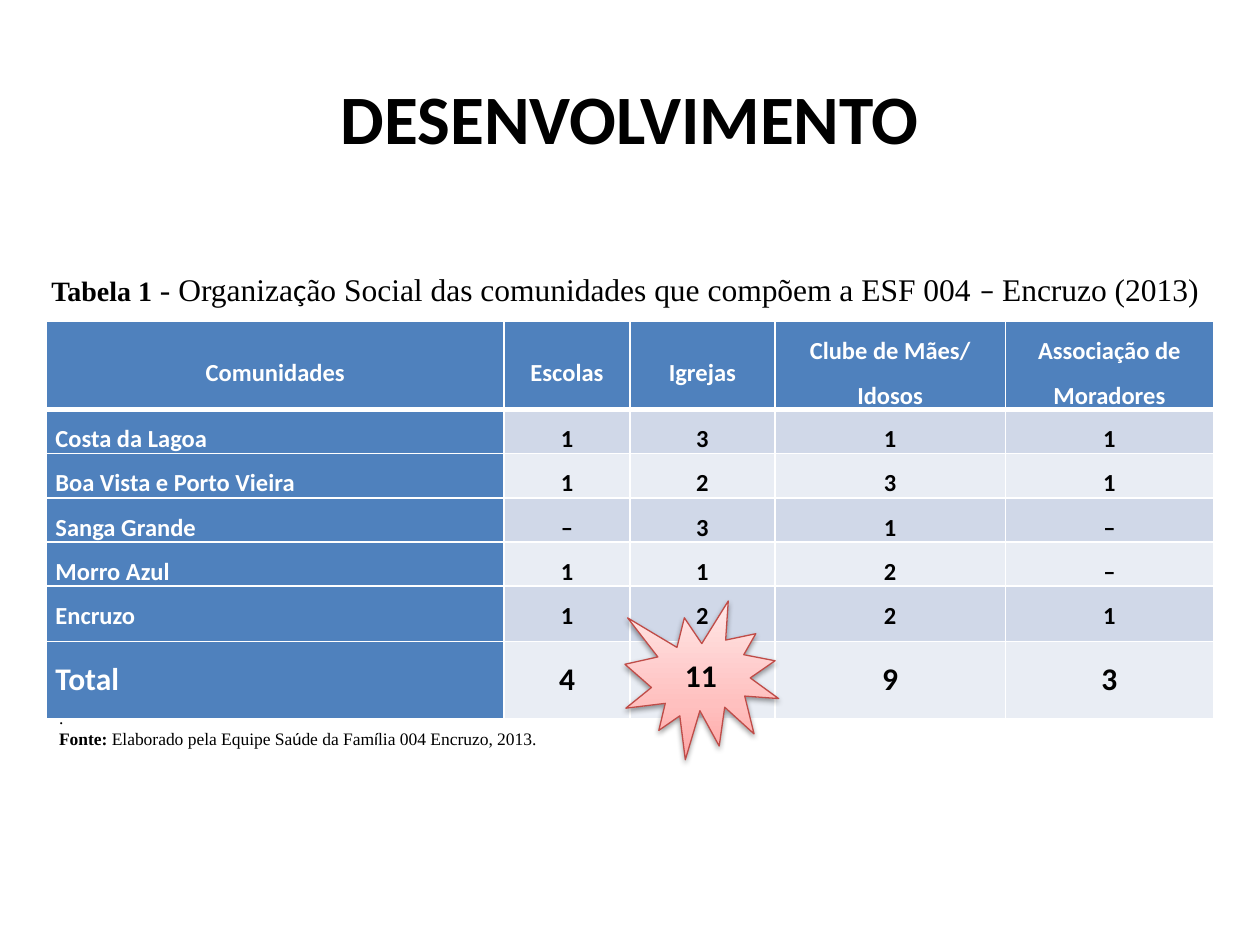
"""Build the slide on the social organisation of the communities."""
from copy import deepcopy
from typing import NamedTuple

from lxml.etree import SubElement
from pptx import Presentation
from pptx.dml.color import RGBColor
from pptx.enum.shapes import MSO_SHAPE
from pptx.enum.text import MSO_ANCHOR, MSO_AUTO_SIZE, PP_ALIGN
from pptx.oxml import parse_xml
from pptx.oxml.ns import nsdecls, qn
from pptx.util import Inches, Pt

WIDTH, HEIGHT = 10, 7.5
SANS, SERIF = "Calibri", "Times New Roman"
BLACK = RGBColor(0x00, 0x00, 0x00)
WHITE = RGBColor(0xFF, 0xFF, 0xFF)
BLUE = RGBColor(0x4F, 0x81, 0xBD)
BANDS = RGBColor(0xE9, 0xED, 0xF4), RGBColor(0xD0, 0xD8, 0xE8)
RED = RGBColor(0xBF, 0x4C, 0x48)
STAR_STOPS = (
    (0, RGBColor(0xFF, 0xA6, 0xA5)),
    (0.35, RGBColor(0xFF, 0xC0, 0xBF)),
    (1, RGBColor(0xFF, 0xE7, 0xE7)),
)


class Box(NamedTuple):
    """Place and size in percent of the slide."""

    x: float
    y: float
    w: float
    h: float


class Piece(NamedTuple):
    """Run of text with its own font."""

    text: str
    font: str = SERIF
    size: float = 10
    bold: bool = False


class Row(NamedTuple):
    """Table row with its height in percent of the slide."""

    cells: tuple
    height: float
    size: float = 14
    anchor: MSO_ANCHOR = MSO_ANCHOR.MIDDLE


TITLE_BOX = Box(5, 4, 90, 16.67)
CAPTION_BOX = Box(3.1, 27.87, 94.1, 5.33)
TABLE_BOX = Box(3.7, 34, 92.6, 42)
SOURCE_BOX = Box(3.7, 74.13, 40.9, 5.87)
STAR_BOX = Box(49.6, 63.6, 12.2, 16.8)
COLUMNS = 36.3, 10, 11.5, 18.3, 16.5

ROWS = (
    Row(("Comunidades", "Escolas", "Igrejas", "Clube de Mães/ Idosos",
         "Associação de Moradores"), 6.27),
    Row(("Costa da Lagoa", "1", "3", "1", "1"), 4.13),
    Row(("Boa Vista e Porto Vieira", "1", "2", "3", "1"), 4.13),
    Row(("Sanga Grande", "–", "3", "1", "–"), 4.13),
    Row(("Morro Azul", "1", "1", "2", "–"), 4.13),
    Row(("Encruzo", "1", "2", "2", "1"), 5.87, anchor=MSO_ANCHOR.TOP),
    Row(("Total", "4", "11", "9", "3"), 8.13, 18, MSO_ANCHOR.TOP),
)
CAPTION = ((
    Piece("Tabela 1", size=16, bold=True),
    Piece(" - Organiza", size=18),
    Piece("ç", SANS, 18),
    Piece("ão Social das comunidades que compõem a ESF 004 ", size=18),
    Piece("– ", SANS, 18),
    Piece("Encruzo (2013)", size=18),
),)
SOURCE = (
    (Piece("."),),
    (
        Piece("Fonte:", bold=True),
        Piece(" Elaborado pela Equipe Sa"),
        Piece("ú", SANS),
        Piece("de da Fam"),
        Piece("í", SANS),
        Piece("lia 004 Encruzo, 2013."),
    ),
)


def across(share: float) -> int:
    """Turn a percentage of the width into a length."""
    return Inches(WIDTH * share / 100)


def down(share: float) -> int:
    """Turn a percentage of the height into a length."""
    return Inches(HEIGHT * share / 100)


def place(box: Box) -> tuple:
    """Give left, top, width and height of a box."""
    return across(box.x), down(box.y), across(box.w), down(box.h)


def style(font, name: str, size: float, bold: bool, color: RGBColor) -> None:
    """Set the looks of a font."""
    font.name, font.size, font.bold = name, Pt(size), bold
    font.color.rgb = color


def add_title(slide, text: str) -> None:
    """Fill and move the title placeholder."""
    sp = slide.shapes.title
    sp.left, sp.top, sp.width, sp.height = place(TITLE_BOX)
    tf = sp.text_frame
    tf.text, tf.vertical_anchor = text, MSO_ANCHOR.MIDDLE
    p = tf.paragraphs[0]
    p.alignment = PP_ALIGN.CENTER
    style(p.font, SANS, 39.6, True, BLACK)


def add_text(slide, box: Box, lines: tuple, wrap: bool, anchor: MSO_ANCHOR) -> None:
    """Add a text box of mixed runs."""
    tf = slide.shapes.add_textbox(*place(box)).text_frame
    tf.word_wrap, tf.vertical_anchor = wrap, anchor
    tf.auto_size = MSO_AUTO_SIZE.SHAPE_TO_FIT_TEXT
    for i, line in enumerate(lines):
        p = tf.add_paragraph() if i else tf.paragraphs[0]
        for piece in line:
            r = p.add_run()
            r.text = piece.text
            style(r.font, piece.font, piece.size, piece.bold, BLACK)


def add_borders(cell, top: float, bottom: float) -> None:
    """Draw white lines around a cell."""
    tc_pr = cell._tc.get_or_add_tcPr()
    for side, width in (("L", 1), ("R", 1), ("T", top), ("B", bottom)):
        ln = SubElement(tc_pr, qn(f"a:ln{side}"), w=str(Pt(width)))
        SubElement(SubElement(ln, qn("a:solidFill")), qn("a:srgbClr"), val=str(WHITE))


def add_table(slide) -> None:
    """Add the table of communities."""
    table = slide.shapes.add_table(len(ROWS), len(COLUMNS), *place(TABLE_BOX)).table
    for column, share in zip(table.columns, COLUMNS):
        column.width = across(share)
    for i, row in enumerate(ROWS):
        table.rows[i].height = down(row.height)
        for j, text in enumerate(row.cells):
            cell = table.cell(i, j)
            header, label = i == 0, j == 0
            add_borders(cell, 3 if i == 1 else 1, 3 if header else 1)
            cell.fill.solid()
            cell.fill.fore_color.rgb = BLUE if header or label else BANDS[i % 2]
            cell.margin_left = cell.margin_right = Inches(0.07)
            cell.margin_top = cell.margin_bottom = 0
            cell.vertical_anchor = row.anchor if header or label else MSO_ANCHOR.TOP
            cell.text = text
            p = cell.text_frame.paragraphs[0]
            p.alignment = PP_ALIGN.LEFT if label and not header else PP_ALIGN.CENTER
            p.line_spacing = 1.5
            style(p.font, SANS, row.size, True, WHITE if header or label else BLACK)


def add_star(slide, text: str) -> None:
    """Add the burst that highlights a total."""
    sp = slide.shapes.add_shape(MSO_SHAPE.EXPLOSION1, *place(STAR_BOX))
    sp.fill.gradient()
    sp.fill.gradient_angle = 90
    stops = sp._element.spPr.find(qn("a:gradFill")).find(qn("a:gsLst"))
    stops.insert(1, deepcopy(stops[0]))
    for stop, (position, color) in zip(sp.fill.gradient_stops, STAR_STOPS):
        stop.position, stop.color.rgb = position, color
    sp.line.color.rgb, sp.line.width = RED, Pt(0.75)
    sp.shadow.inherit = False
    sp._element.spPr.find(qn("a:effectLst")).append(parse_xml(
        f'<a:outerShdw {nsdecls("a")} blurRad="{Pt(3.1)}" dist="{Pt(1.6)}" dir="5400000"'
        f' rotWithShape="0"><a:srgbClr val="{BLACK}"><a:alpha val="38000"/></a:srgbClr>'
        '</a:outerShdw>'))
    tf = sp.text_frame
    tf.text, tf.vertical_anchor = text, MSO_ANCHOR.MIDDLE
    p = tf.paragraphs[0]
    p.alignment = PP_ALIGN.CENTER
    style(p.font, SANS, 18, True, BLACK)


def main() -> None:
    """Build and save the presentation."""
    prs = Presentation()
    prs.slide_width, prs.slide_height = Inches(WIDTH), Inches(HEIGHT)
    slide = prs.slides.add_slide(prs.slide_layouts[5])
    add_title(slide, "DESENVOLVIMENTO")
    add_text(slide, SOURCE_BOX, SOURCE, False, MSO_ANCHOR.MIDDLE)
    add_text(slide, CAPTION_BOX, CAPTION, True, MSO_ANCHOR.TOP)
    add_table(slide)
    add_star(slide, "11")
    prs.save("out.pptx")


if __name__ == "__main__":
    main()
